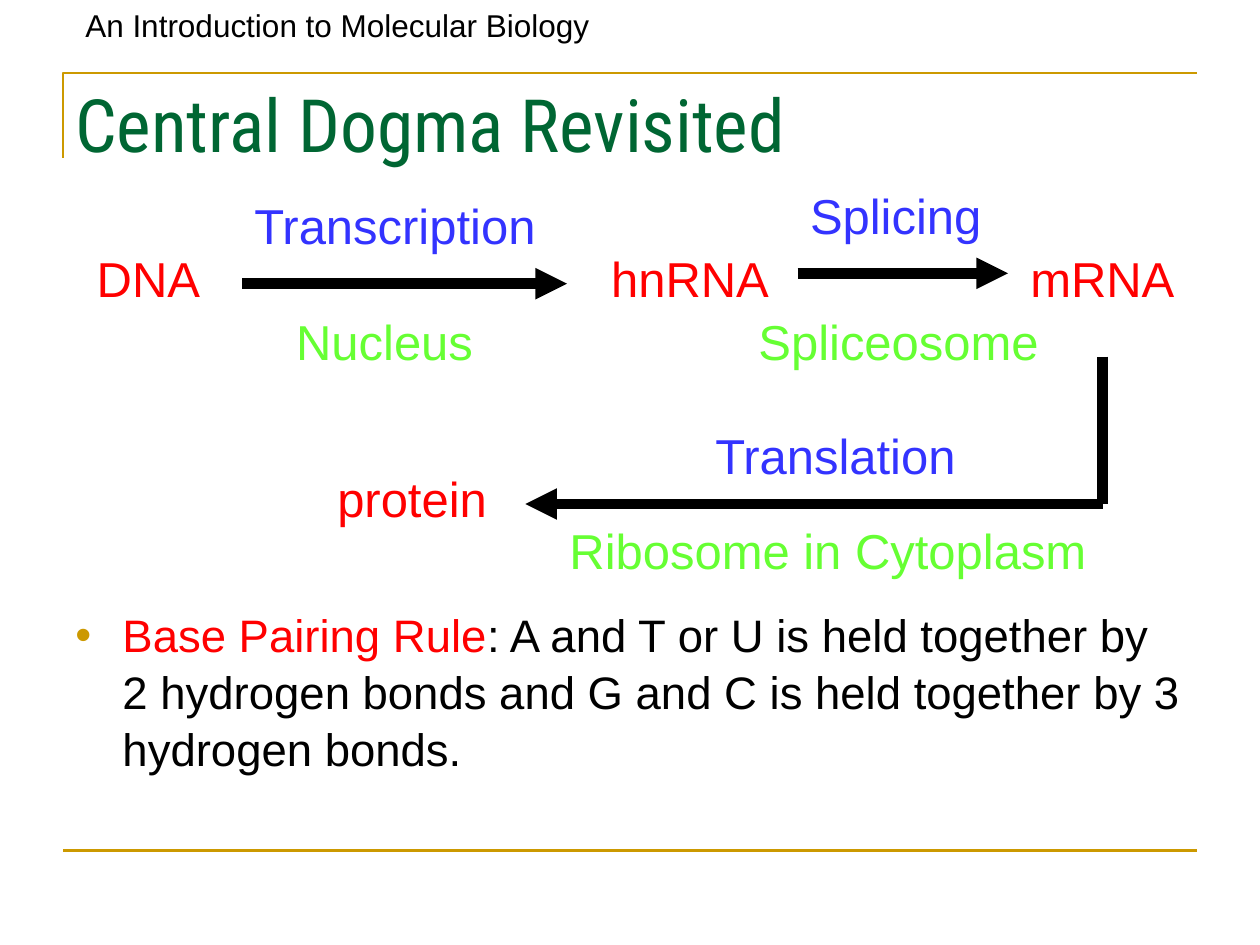
import pptx
import pptx.util
import pptx.dml.color
import pptx.enum.shapes
import pptx.enum.text
import pptx.oxml
import pptx.oxml.ns

Cm = pptx.util.Cm
Pt = pptx.util.Pt
qn = pptx.oxml.ns.qn

HUES = {
    "gold": "CC9900",
    "green": "006633",
    "black": "000000",
    "red": "FF0000",
    "blue": "3333FF",
    "lime": "66FF33",
}

LABELS = {
    "red": [
        ("DNA", 1.7, 4.88, 2.59),
        ("hnRNA", 12.07, 4.88, 3.71),
        ("mRNA", 20.52, 4.88, 3.43),
        ("protein", 6.55, 9.32, 3.53),
    ],
    "blue": [
        ("Transcription", 4.88, 3.81, 6.22),
        ("Splicing", 16.08, 3.61, 3.99),
        ("Translation", 14.17, 8.46, 5.41),
    ],
    "lime": [
        ("Nucleus", 5.72, 6.15, 4.09),
        ("Spliceosome", 15.04, 6.15, 6.17),
        ("Ribosome in Cytoplasm", 11.23, 10.36, 10.97),
    ],
}

STEPS = [
    ((4.88, 5.72), (11.43, 5.72), True),
    ((16.08, 5.51), (20.32, 5.51), True),
    ((22.23, 7.19), (22.23, 10.16), False),
    ((22.23, 10.16), (10.59, 10.16), True),
]


def hue(name):
    return pptx.dml.color.RGBColor.from_string(HUES[name])


def add_run(para, text, size=28, color="black", font="Arial"):
    run = para.add_run()
    run.text = text
    run.font.size = Pt(size)
    run.font.name = font
    run.font.color.rgb = hue(color)


def add_text(slide, text, box, wrap=True, **style):
    frame = slide.shapes.add_textbox(*map(Cm, box)).text_frame
    frame.word_wrap = wrap
    if not wrap:
        frame.auto_size = pptx.enum.text.MSO_AUTO_SIZE.SHAPE_TO_FIT_TEXT
    para = frame.paragraphs[0]
    add_run(para, text, **style)
    return para


def add_mark(para, color, indent):
    props = para._p.get_or_add_pPr()
    props.set("marL", str(Cm(indent)))
    props.set("indent", str(-Cm(indent)))
    tint = pptx.oxml.ns.nsdecls("a")
    for xml in (
        f'<a:buClr {tint}><a:srgbClr val="{HUES[color]}"/></a:buClr>',
        f'<a:buFont {tint} typeface="Arial"/>',
        f'<a:buChar {tint} char="•"/>',
    ):
        props.append(pptx.oxml.parse_xml(xml))


def add_line(slide, start, end, color="black", width=6, arrow=False):
    kind = pptx.enum.shapes.MSO_CONNECTOR.STRAIGHT
    line = slide.shapes.add_connector(kind, *map(Cm, start + end))
    line.line.color.rgb = hue(color)
    line.line.width = Pt(width)
    props = line._element.spPr
    if arrow:
        tip = props.find(qn("a:ln")).makeelement(qn("a:tailEnd"), {"type": "triangle"})
        props.find(qn("a:ln")).append(tip)
    props.append(props.makeelement(qn("a:effectLst"), {}))


def add_frame(slide):
    left, top, right, low = map(Cm, (1.27, 1.47, 24.13, 3.18))
    pen = slide.shapes.build_freeform(left, low)
    pen.add_line_segments([(left, top), (right, top)], close=False)
    shape = pen.convert_to_shape()
    shape.shadow.inherit = False
    shape.fill.background()
    shape.line.color.rgb = hue("gold")
    shape.line.width = Pt(1.5)


def add_rule(slide):
    para = add_text(slide, "Base Pairing Rule", (1.27, 12.07, 22.86, 4.95),
                    size=26, color="red")
    add_run(para, ": A and T or U is held together by 2 hydrogen bonds "
            "and G and C is held together by 3 hydrogen bonds.", size=26)
    para.line_spacing = 1.04
    para.space_before = Pt(3)
    add_mark(para, "gold", 0.95)


def main():
    deck = pptx.Presentation()
    deck.slide_width, deck.slide_height = Cm(25.4), Cm(19.05)
    slide = deck.slides.add_slide(deck.slide_layouts[6])
    add_frame(slide)
    add_line(slide, (1.27, 17.15), (24.13, 17.15), color="gold", width=1.5)
    add_text(slide, "An Introduction to Molecular Biology",
             (1.47, 0, 13.97, 1.02), size=18)
    add_text(slide, "Central Dogma Revisited", (1.27, 1.47, 22.86, 2.46),
             size=42, color="green", font="Roboto Condensed")
    add_rule(slide)
    for color, items in LABELS.items():
        for text, left, top, width in items:
            add_text(slide, text, (left, top, width, 1.45), wrap=False, color=color)
    for start, end, arrow in STEPS:
        add_line(slide, start, end, arrow=arrow)
    deck.save("out.pptx")


if __name__ == "__main__":
    main()
